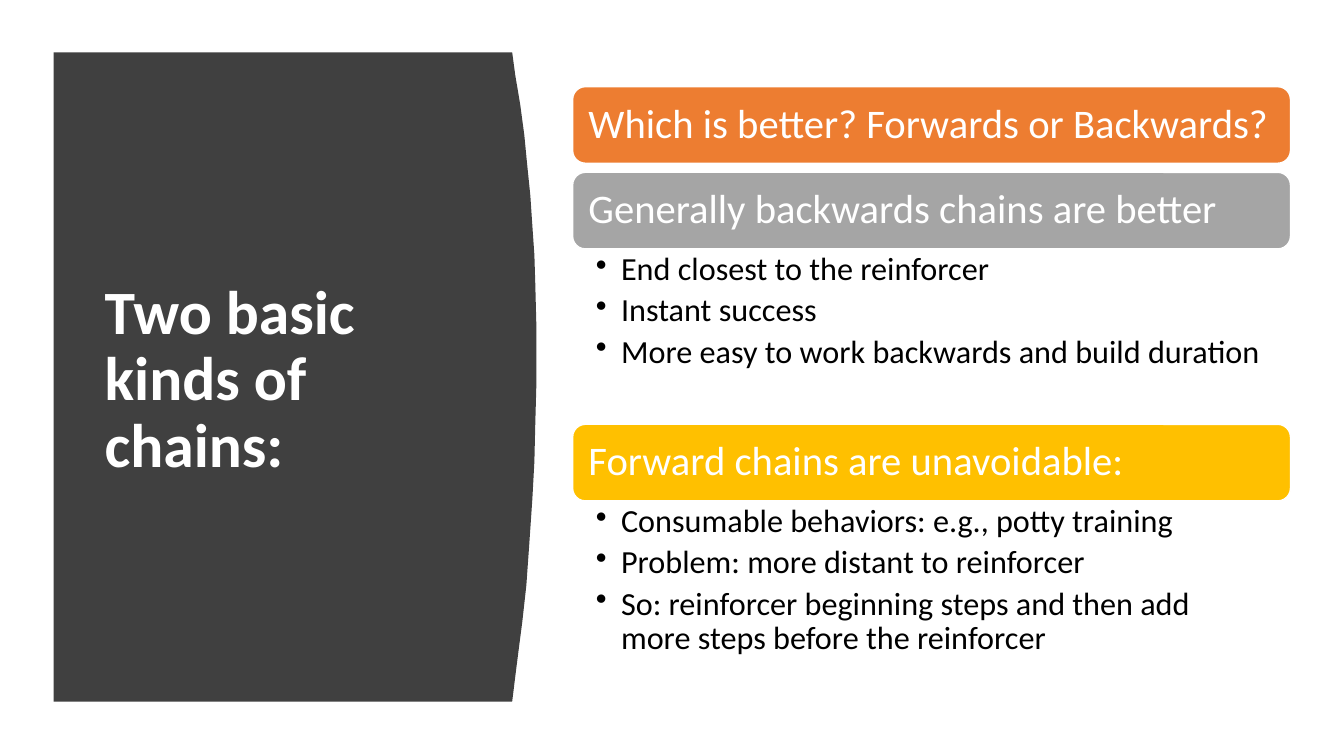
from dataclasses import dataclass

from lxml import etree
from pptx import Presentation
from pptx.dml.color import RGBColor
from pptx.enum.shapes import MSO_SHAPE
from pptx.enum.text import MSO_ANCHOR, PP_ALIGN
from pptx.oxml.ns import qn
from pptx.shapes.autoshape import Shape
from pptx.slide import Slide
from pptx.text.text import TextFrame
from pptx.util import Inches, Pt

ROUNDED = MSO_SHAPE.ROUNDED_RECTANGLE
MIDDLE, TOP = MSO_ANCHOR.MIDDLE, MSO_ANCHOR.TOP
LEFT = PP_ALIGN.LEFT

WIDTH, HEIGHT = Inches(13.33), Inches(7.5)


@dataclass(frozen=True)
class Theme:
    font: str = "Calibri"
    white: str = "FFFFFF"
    black: str = "000000"
    panel: str = "404040"
    orange: str = "ED7D31"
    gray: str = "A5A5A5"
    gold: str = "FFC000"
    title_size: float = 44
    heading_size: float = 29
    bullet_size: float = 23
    line_spacing: float = 0.9


@dataclass(frozen=True)
class Section:
    heading: str
    color: str
    below: float  # height between this bar and the next, % of slide height
    bullets: tuple[str, ...] = ()


THEME = Theme()

# Percentages of the slide's width (left, width) and height (top, heights)
COLUMN_LEFT, COLUMN_WIDTH = 42.61, 53.41
FIRST_TOP, BAR_HEIGHT = 11.47, 10.13
TITLE_BOX = (7.05, 14.8, 28.06, 71.2)

# Panel outline in (% of width, % of height): straight left side, bowed right side
PANEL_LEFT, PANEL_TOP, PANEL_BOTTOM = 3.98, 6.93, 92.8
BOWED_EDGE = (
    (38.11, PANEL_TOP), (38.33, 9.87), (38.71, 13.87), (39.01, 17.87),
    (39.23, 21.87), (39.46, 25.87), (39.61, 29.87), (39.76, 33.73),
    (39.83, 37.6), (39.91, 43.33), (39.91, 50.67), (39.83, 56),
    (39.76, 61.07), (39.61, 66), (39.38, 72), (39.16, 77.47),
    (38.86, 82.27), (38.56, 86.4), (38.33, 89.6), (38.11, PANEL_BOTTOM),
)

TITLE = "Two basic kinds of chains:"
SECTIONS = (
    Section("Which is better? Forwards or Backwards?", THEME.orange, 1.2),
    Section("Generally backwards chains are better", THEME.gray, 23.2, (
        "End closest to the reinforcer",
        "Instant success",
        "More easy to work backwards and build duration",
    )),
    Section("Forward chains are unavoidable:", THEME.gold, 21.87, (
        "Consumable behaviors: e.g., potty training",
        "Problem: more distant to reinforcer",
        "So: reinforcer beginning steps and then add more steps before the reinforcer",
    )),
)


def across(percent: float) -> int:
    return round(WIDTH * percent / 100)


def down(percent: float) -> int:
    return round(HEIGHT * percent / 100)


def place(left: float, top: float, width: float, height: float) -> tuple[int, int, int, int]:
    """Turn percentages of the slide into a shape's position and size."""
    return across(left), down(top), across(width), down(height)


def paint(sp: Shape, color: str) -> None:
    sp.shadow.inherit = False
    sp.fill.solid()
    sp.fill.fore_color.rgb = RGBColor.from_string(color)


def write(tf: TextFrame, lines: tuple[str, ...], size: float, color: str,
          anchor: MSO_ANCHOR, bold: bool = False, space_after: float = 0) -> None:
    tf.word_wrap = True
    tf.vertical_anchor = anchor
    for i, line in enumerate(lines):
        p = tf.add_paragraph() if i else tf.paragraphs[0]
        p.text = line
        p.alignment = LEFT
        p.line_spacing = THEME.line_spacing
        p.space_after = Pt(space_after)
        p.font.name, p.font.size, p.font.bold = THEME.font, Pt(size), bold
        p.font.color.rgb = RGBColor.from_string(color)


def set_margins(tf: TextFrame, side: float, edge: float) -> None:
    tf.margin_left = tf.margin_right = Inches(side)
    tf.margin_top = tf.margin_bottom = Inches(edge)


def add_bullet_marks(tf: TextFrame) -> None:
    for p in tf.paragraphs:
        pPr = p._p.get_or_add_pPr()
        pPr.set("marL", str(Inches(0.25)))
        pPr.set("indent", str(-Inches(0.25)))
        mark = etree.Element(qn("a:buChar"), char="•")
        pPr.find(qn("a:defRPr")).addprevious(mark)


def draw_panel(s: Slide) -> None:
    points = [(across(x), down(y)) for x, y in (*BOWED_EDGE, (PANEL_LEFT, PANEL_BOTTOM))]
    outline = s.shapes.build_freeform(across(PANEL_LEFT), down(PANEL_TOP))
    outline.add_line_segments(points, close=True)
    sp = outline.convert_to_shape()
    paint(sp, THEME.panel)
    sp.line.fill.background()


def draw_section(s: Slide, section: Section, top: float) -> None:
    bar = s.shapes.add_shape(ROUNDED, *place(COLUMN_LEFT, top, COLUMN_WIDTH, BAR_HEIGHT))
    paint(bar, section.color)
    bar.line.color.rgb = RGBColor.from_string(THEME.white)
    bar.line.width = Pt(1)
    write(bar.text_frame, (section.heading,), THEME.heading_size, THEME.white, MIDDLE)
    set_margins(bar.text_frame, 0.12, 0.12)
    if section.bullets:
        body = s.shapes.add_textbox(
            *place(COLUMN_LEFT, top + BAR_HEIGHT, COLUMN_WIDTH, section.below))
        tf = body.text_frame
        write(tf, section.bullets, THEME.bullet_size, THEME.black, TOP, space_after=4.6)
        set_margins(tf, 0.23, 0.04)
        add_bullet_marks(tf)


def main() -> None:
    prs = Presentation()
    prs.slide_width, prs.slide_height = WIDTH, HEIGHT
    s = prs.slides.add_slide(prs.slide_layouts[6])
    draw_panel(s)
    title = s.shapes.add_textbox(*place(*TITLE_BOX))
    write(title.text_frame, (TITLE,), THEME.title_size, THEME.white, MIDDLE, bold=True)
    top = FIRST_TOP
    for section in SECTIONS:
        draw_section(s, section, top)
        top += BAR_HEIGHT + section.below
    prs.save("out.pptx")


if __name__ == "__main__":
    main()
